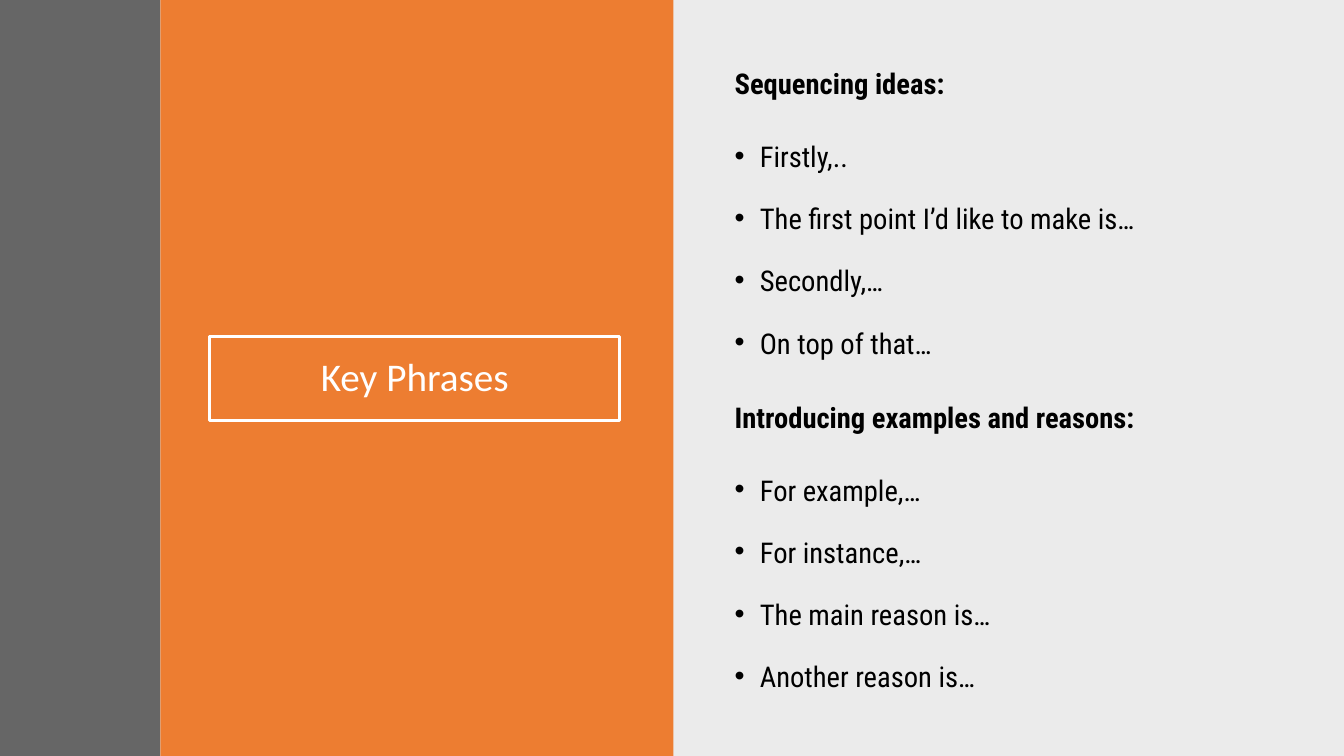
from dataclasses import dataclass

from lxml.etree import SubElement
from pptx import Presentation
from pptx.dml.color import RGBColor
from pptx.enum.shapes import MSO_SHAPE as Shape
from pptx.enum.text import MSO_ANCHOR as Anchor, PP_ALIGN as Align
from pptx.oxml.ns import qn
from pptx.util import Pt


@dataclass(frozen=True)
class Theme:
    orange: RGBColor = RGBColor(0xED, 0x7D, 0x31)
    charcoal: RGBColor = RGBColor(0x40, 0x40, 0x40)
    black: RGBColor = RGBColor(0, 0, 0)
    white: RGBColor = RGBColor(0xFF, 0xFF, 0xFF)
    title_font: str = "Calibri"
    body_font: str = "Roboto Condensed"
    title_size: float = 28
    body_size: float = 20.4


THEME = Theme()
WIDTH, HEIGHT = 960, 540

# Top, height, heading and phrases of each list
PHRASE_LISTS = [
    (50.4, 219.6, "Sequencing ideas:",
     ["Firstly,..", "The first point I’d like to make is…",
      "Secondly,…", "On top of that…"]),
    (288.7, 200.9, "Introducing examples and reasons:",
     ["For example,…", "For instance,…",
      "The main reason is…", "Another reason is…"]),
]


def add_panel(slide, left, width, color, opacity=100):
    """Add a full-height colour band."""
    shape = slide.shapes.add_shape(
        Shape.RECTANGLE, Pt(left), Pt(0), Pt(width), Pt(HEIGHT))
    shape.shadow.inherit = False
    shape.line.fill.background()
    shape.fill.solid()
    shape.fill.fore_color.rgb = color
    if opacity < 100:
        color_element = shape.fill._xPr.find(f"{qn('a:solidFill')}/{qn('a:srgbClr')}")
        SubElement(color_element, qn("a:alpha"), val=str(opacity * 1000))


def add_title(slide, text, left, top, width, height):
    """Add the outlined title box."""
    shape = slide.shapes.add_shape(
        Shape.RECTANGLE, Pt(left), Pt(top), Pt(width), Pt(height))
    shape.shadow.inherit = False
    shape.fill.background()
    shape.line.color.rgb = THEME.white
    shape.line.width = Pt(2)
    frame = shape.text_frame
    frame.word_wrap = True
    frame.vertical_anchor = Anchor.MIDDLE
    paragraph = frame.paragraphs[0]
    paragraph.text = text
    paragraph.alignment = Align.CENTER
    paragraph.line_spacing = 0.9
    paragraph.font.name = THEME.title_font
    paragraph.font.size = Pt(THEME.title_size)
    paragraph.font.color.rgb = THEME.white


def style_body(paragraph, text, bold=False):
    paragraph.text = text
    paragraph.line_spacing = 0.7
    paragraph.font.name = THEME.body_font
    paragraph.font.size = Pt(THEME.body_size)
    paragraph.font.color.rgb = THEME.black
    paragraph.font.bold = bold


def add_bullet(paragraph, indent=18):
    properties = paragraph._p.get_or_add_pPr()
    properties.set("marL", str(Pt(indent)))
    properties.set("indent", str(-Pt(indent)))
    bullet_font = SubElement(properties, qn("a:buFont"), typeface="Arial")
    bullet_font.addnext(SubElement(properties, qn("a:buChar"), char="•"))
    # Default run properties must follow the bullet
    properties.append(properties.find(qn("a:defRPr")))


def add_phrase_list(slide, top, height, heading, phrases):
    """Add a bold heading with bulleted phrases below it."""
    box = slide.shapes.add_textbox(Pt(517.7), Pt(top), Pt(398.2), Pt(height))
    frame = box.text_frame
    frame.word_wrap = True
    style_body(frame.paragraphs[0], heading, bold=True)
    for index, phrase in enumerate(phrases):
        paragraph = frame.add_paragraph()
        style_body(paragraph, phrase)
        paragraph.space_before = Pt(27.2 if index else 35)
        add_bullet(paragraph)


def main():
    presentation = Presentation()
    presentation.slide_width, presentation.slide_height = Pt(WIDTH), Pt(HEIGHT)
    slide = presentation.slides.add_slide(presentation.slide_layouts[6])

    # Background bands
    add_panel(slide, 480, 480, THEME.black, opacity=8)
    add_panel(slide, 114.5, 366.5, THEME.orange)
    add_panel(slide, 0, 114.5, THEME.charcoal, opacity=80)

    # Title and phrase lists
    add_title(slide, "Key Phrases", 149.8, 240.5, 293, 59.8)
    for phrase_list in PHRASE_LISTS:
        add_phrase_list(slide, *phrase_list)

    presentation.save("out.pptx")


if __name__ == "__main__":
    main()
